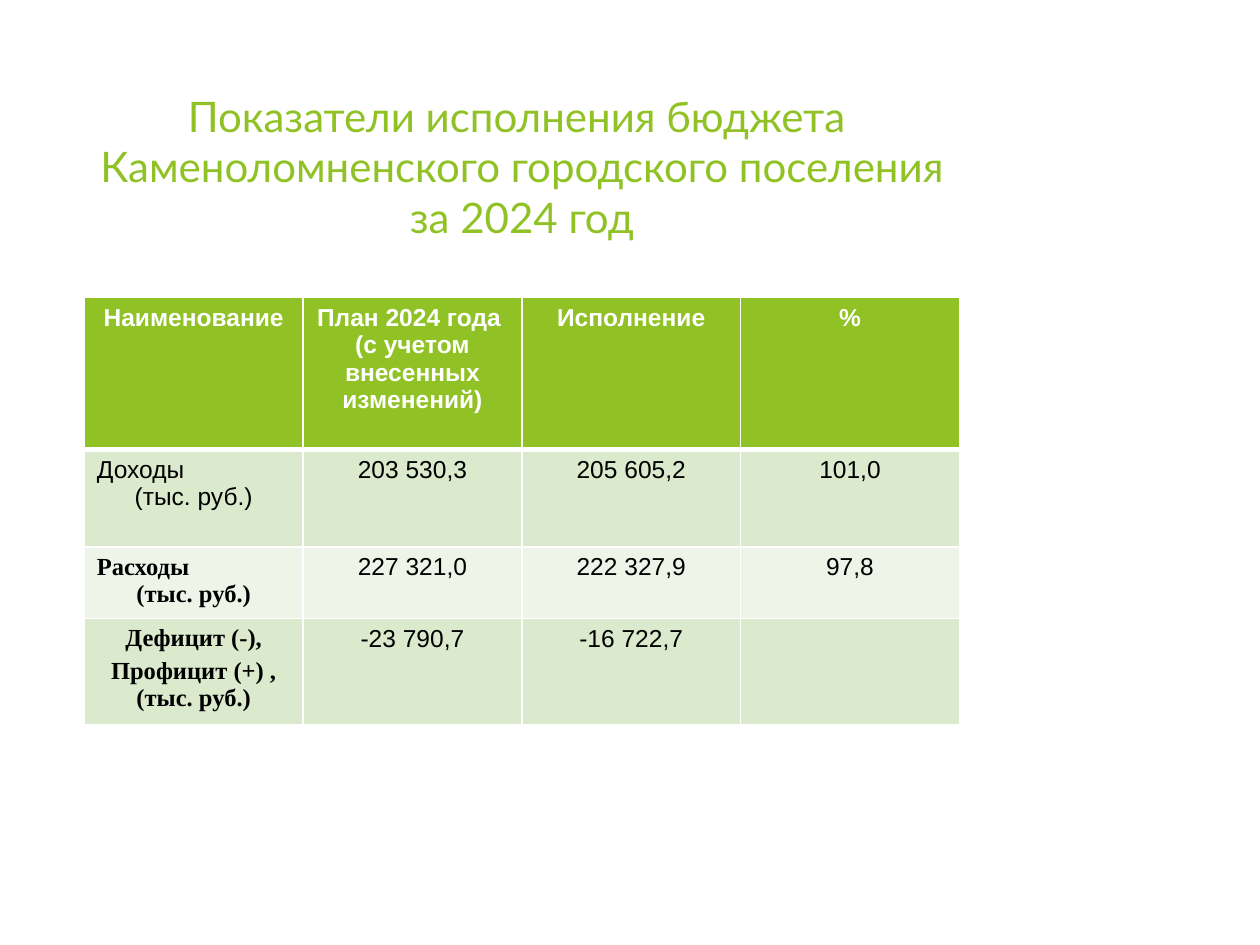
from lxml import etree
from pptx import Presentation
from pptx import util as u
from pptx.dml.color import RGBColor
from pptx.enum import text
from pptx.oxml import ns

COLORS = {"green": "90C226", "band": "DBE9CD", "light": "EEF4E8",
          "white": "FFFFFF", "black": "000000"}
LEFT, CENTER = text.PP_ALIGN.LEFT, text.PP_ALIGN.CENTER
SANS, SERIF = "Arial", "Times New Roman"
TITLE = ("Показатели исполнения бюджета \v"
         "Каменоломненского городского поселения\vза 2024 год")
HEADER = [["Наименование"], ["План 2024 года ", "(с учетом внесенных изменений)"],
          ["Исполнение"], ["%"]]
BODY = [
    [["Доходы", "(тыс. руб.)"], ["203 530,3"], ["205 605,2"], ["101,0"]],
    [["Расходы", "(тыс. руб.)"], ["227 321,0"], ["222 327,9"], ["97,8"]],
    [["Дефицит (-),", "Профицит (+) , (тыс. руб.)"], ["-23 790,7"], ["-16 722,7"], [""]],
]
ROW_HEIGHTS = [3.06, 1.97, 1.35, 1.98]
ROW_FILLS = ["green", "band", "light", "band"]


def format_paragraph(p, color, align=CENTER, **font):
    """Set the alignment, colour and font values of a paragraph."""
    p.alignment = align
    for r in p.runs:
        for name, value in font.items():
            setattr(r.font, name, value)
        r.font.color.rgb = RGBColor.from_string(COLORS[color])


def add_title(s, x, y, w, h):
    """Place the heading in the given box."""
    tf = s.shapes.add_textbox(x, y, w, h).text_frame
    tf.word_wrap = True
    tf.vertical_anchor = text.MSO_ANCHOR.TOP
    p = tf.paragraphs[0]
    p.text = TITLE
    format_paragraph(p, "green", name="Lato", size=u.Pt(24))


def add_borders(cell, widths):
    """Draw white lines on the sides of a cell, ahead of its fill."""
    props = cell._tc.get_or_add_tcPr()
    for i, (side, width) in enumerate(widths.items()):
        line = etree.Element(ns.qn(f"a:ln{side}"), w=str(u.Pt(width)))
        fill = etree.SubElement(line, ns.qn("a:solidFill"))
        etree.SubElement(fill, ns.qn("a:srgbClr"), val=COLORS["white"])
        props.insert(i, line)


def fill_cell(cell, lines, row, col):
    """Write the lines of one cell and style it by its row and column."""
    header = row == 0
    label = col == 0 and row > 1
    cell.fill.solid()
    cell.fill.fore_color.rgb = RGBColor.from_string(COLORS[ROW_FILLS[row]])
    add_borders(cell, {"L": 1, "R": 1, "T": 3 if row == 1 else 1, "B": 3 if header else 1})
    cell.text = "\n".join(lines)
    for i, p in enumerate(cell.text_frame.paragraphs):
        align = LEFT if col == 0 and row in (1, 2) and i == 0 else CENTER
        format_paragraph(p, "white" if header else "black", align,
                         name=SERIF if label else SANS, size=u.Pt(14),
                         bold=header or label)
        if label and row == 3 and i:
            p.space_before = u.Pt(3)


def add_budget_table(s, x, y, w):
    """Place the budget table with equal columns across the given width."""
    rows = [HEADER, *BODY]
    h = u.Cm(sum(ROW_HEIGHTS))
    table = s.shapes.add_table(len(rows), len(HEADER), x, y, w, h).table
    for column in table.columns:
        column.width = w // len(HEADER)
    for i, cells in enumerate(rows):
        table.rows[i].height = u.Cm(ROW_HEIGHTS[i])
        for j, lines in enumerate(cells):
            fill_cell(table.cell(i, j), lines, i, j)


def main():
    """Build and save the slide."""
    prs = Presentation()
    prs.slide_width, prs.slide_height = u.Cm(25.4), u.Cm(19.05)
    s = prs.slides.add_slide(prs.slide_layouts[6])
    left, width = u.Cm(1.7), u.Cm(17.64)
    add_title(s, left, u.Cm(1.7), width, u.Cm(3.66))
    add_budget_table(s, left, u.Cm(6), width)
    prs.save("out.pptx")


if __name__ == "__main__":
    main()
